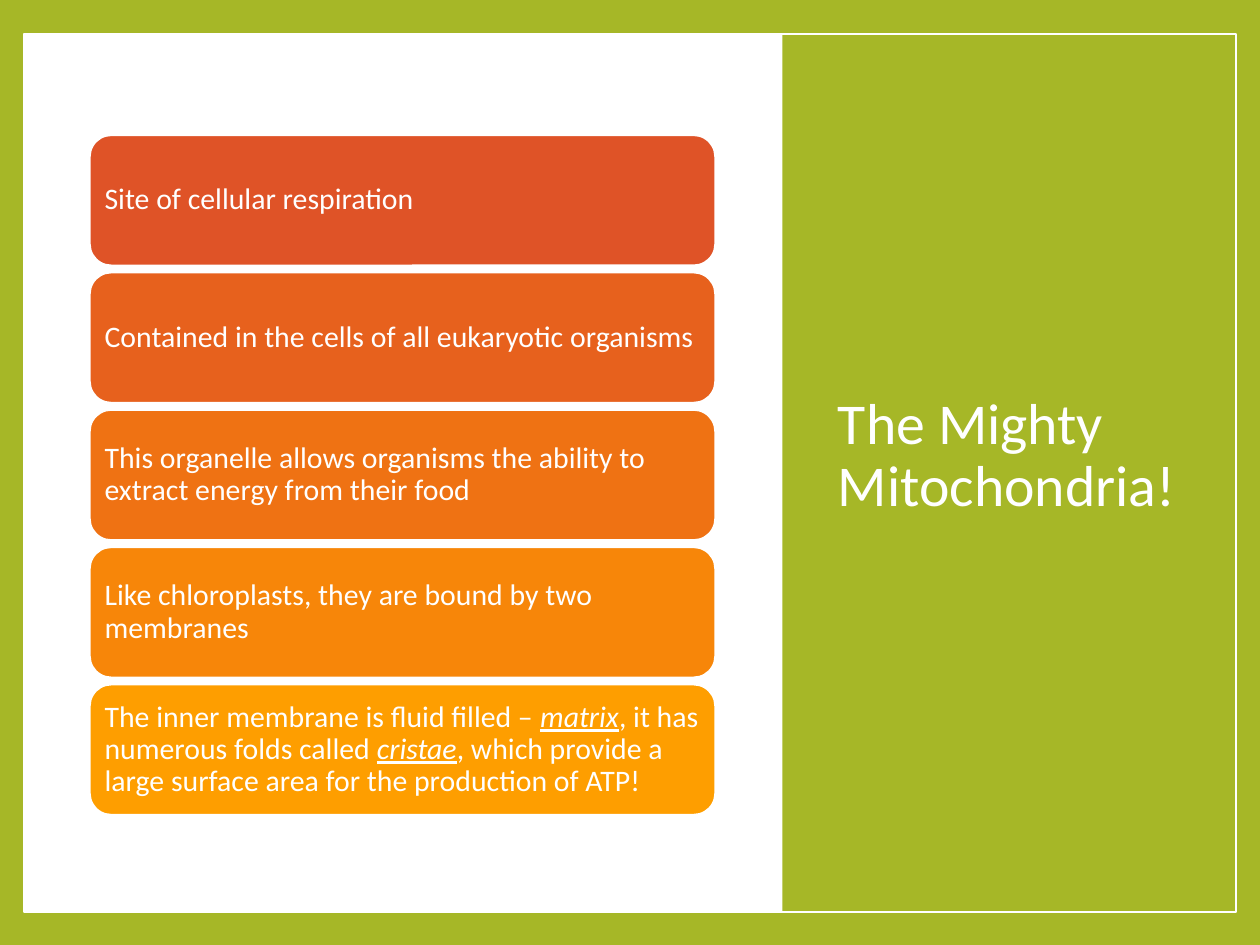
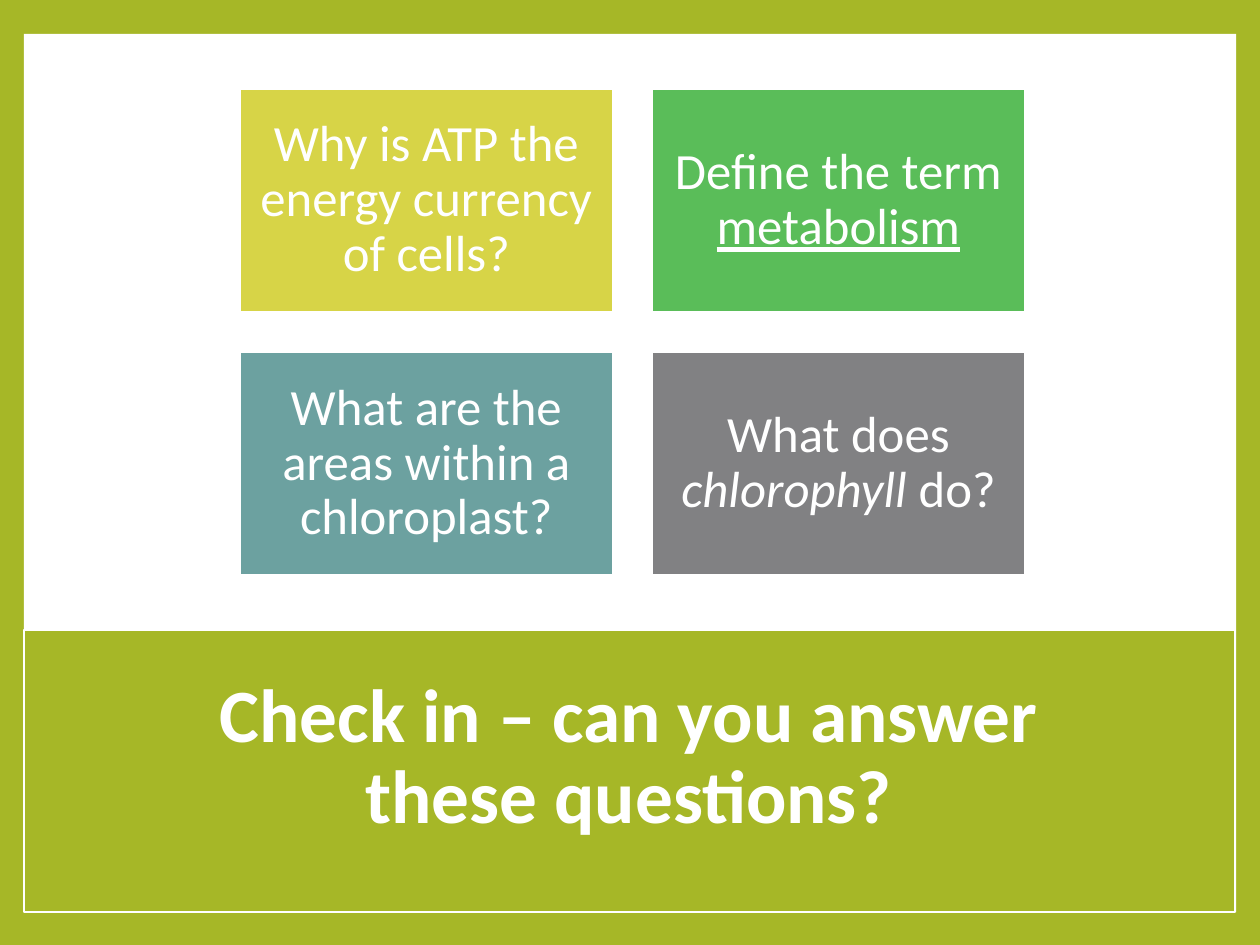
from dataclasses import dataclass
from typing import NamedTuple, Optional

from pptx import Presentation
from pptx.dml.color import RGBColor
from pptx.enum.shapes import MSO_SHAPE
from pptx.enum.text import MSO_ANCHOR, MSO_AUTO_SIZE, PP_ALIGN
from pptx.util import Inches, Pt

# Shared look
COLORS = {
    "lime": "A6B727", "white": "FFFFFF",
    "red": "DF5327", "vermilion": "E7611D", "orange": "EF7213",
    "amber": "F78609", "gold": "FE9E00",
    "yellow": "D7D447", "green": "5ABD59", "teal": "6CA1A0", "gray": "818183",
}
FONT = "Calibri"
LINE_SPACING = 0.9

# The slide is a grid of 100 columns by 75 rows
COLUMNS, ROWS = 100, 75
SLIDE_WIDTH, SLIDE_HEIGHT = Inches(10), Inches(7.5)


class Box(NamedTuple):
    column: float
    row: float
    columns: float
    rows: float

    def lengths(self) -> tuple:
        across, down = SLIDE_WIDTH / COLUMNS, SLIDE_HEIGHT / ROWS
        return (round(self.column * across), round(self.row * down),
                round(self.columns * across), round(self.rows * down))


class TextRun(NamedTuple):
    text: str
    italic: bool = False
    underline: bool = False


class Card(NamedTuple):
    color: str
    runs: list


@dataclass
class CardGrid:
    first: Box
    per_row: int
    column_gap: float
    row_gap: float
    shape_type: MSO_SHAPE
    font_size: float
    inset: float
    alignment: PP_ALIGN

    def box(self, index: int) -> Box:
        row, column = divmod(index, self.per_row)
        first = self.first
        return Box(first.column + column * (first.columns + self.column_gap),
                   first.row + row * (first.rows + self.row_gap),
                   first.columns, first.rows)


FULL_SLIDE = Box(0, 0, COLUMNS, ROWS)
FRAME = Box(1.9, 2.7, 96.2, 69.7)

FACTS_GRID = CardGrid(Box(7.1, 10.7, 49.7, 10.4), 1, 0, 0.5,
                      MSO_SHAPE.ROUNDED_RECTANGLE, 17, 0.07, PP_ALIGN.LEFT)
FACTS = [
    Card("red", [TextRun("Site of cellular respiration")]),
    Card("vermilion", [TextRun("Contained in the cells of all eukaryotic organisms")]),
    Card("orange", [TextRun("This organelle allows organisms the ability to "
                            "extract energy from their food")]),
    Card("amber", [TextRun("Like chloroplasts, they are bound by two membranes")]),
    Card("gold", [
        TextRun("The inner membrane is fluid filled – "),
        TextRun("matrix", italic=True, underline=True),
        TextRun(", it has numerous folds called "),
        TextRun("cristae", italic=True, underline=True),
        TextRun(", which provide a large surface area for the production of ATP!"),
    ]),
]

QUESTIONS_GRID = CardGrid(Box(19, 7, 29.7, 17.8), 2, 3, 3.1,
                          MSO_SHAPE.RECTANGLE, 29, 0.12, PP_ALIGN.CENTER)
QUESTIONS = [
    Card("yellow", [TextRun("Why is ATP the energy currency of cells?")]),
    Card("green", [TextRun("Define the term "),
                   TextRun("metabolism", underline=True)]),
    Card("teal", [TextRun("What are the areas within a chloroplast?")]),
    Card("gray", [TextRun("What does "), TextRun("chlorophyll", italic=True),
                  TextRun(" do?")]),
]


def rgb(name: str) -> RGBColor:
    return RGBColor.from_string(COLORS[name])


def add_panel(slide, box: Box, fill: Optional[str] = None, line_width: float = 0,
              shape_type: MSO_SHAPE = MSO_SHAPE.RECTANGLE):
    """Draw a flat shape, with a white outline if a line width is given."""
    shape = slide.shapes.add_shape(shape_type, *box.lengths())
    shape.shadow.inherit = False
    if fill:
        shape.fill.solid()
        shape.fill.fore_color.rgb = rgb(fill)
    else:
        shape.fill.background()
    if line_width:
        shape.line.color.rgb = rgb("white")
        shape.line.width = Pt(line_width)
    else:
        shape.line.fill.background()
    return shape


def write_text(shape, runs: list, size: float, alignment: PP_ALIGN,
               bold: bool = False) -> None:
    """Fill a shape with one paragraph of white text, centred vertically."""
    frame = shape.text_frame
    frame.word_wrap = True
    frame.auto_size = MSO_AUTO_SIZE.NONE
    frame.vertical_anchor = MSO_ANCHOR.MIDDLE
    paragraph = frame.paragraphs[0]
    paragraph.alignment = alignment
    paragraph.line_spacing = LINE_SPACING
    for item in runs:
        run = paragraph.add_run()
        run.text = item.text
        font = run.font
        font.name, font.size, font.bold = FONT, Pt(size), bold
        font.italic, font.underline = item.italic, item.underline
        font.color.rgb = rgb("white")


def add_cards(slide, grid: CardGrid, cards: list) -> None:
    for index, card in enumerate(cards):
        shape = add_panel(slide, grid.box(index), card.color, 1.5, grid.shape_type)
        frame = shape.text_frame
        frame.margin_left = frame.margin_right = Inches(grid.inset)
        frame.margin_top = frame.margin_bottom = Inches(grid.inset)
        write_text(shape, card.runs, grid.font_size, grid.alignment)


def add_framed_slide(presentation):
    """Start a slide with a lime border around a white page."""
    slide = presentation.slides.add_slide(presentation.slide_layouts[5])
    add_panel(slide, FULL_SLIDE, "lime")
    add_panel(slide, FRAME, "white")
    return slide


def place_title(slide, text: str, box: Box, size: float, alignment: PP_ALIGN,
                bold: bool = False) -> None:
    """Move the title placeholder onto its band, in front of the panels."""
    title = slide.shapes.title
    title.left, title.top, title.width, title.height = box.lengths()
    title.element.getparent().append(title.element)
    write_text(title, [TextRun(text)], size, alignment, bold)


def build_mitochondria_slide(presentation) -> None:
    slide = add_framed_slide(presentation)
    add_panel(slide, Box(62.1, 0, 37.9, ROWS), "lime")
    place_title(slide, "The Mighty Mitochondria!", Box(65.5, 6.7, 29.3, 59.1),
                33, PP_ALIGN.LEFT)
    add_panel(slide, FRAME, line_width=1)
    add_cards(slide, FACTS_GRID, FACTS)


def build_check_in_slide(presentation) -> None:
    slide = add_framed_slide(presentation)
    add_panel(slide, Box(1.9, 50, 96.1, 22.4), "lime", 1)
    place_title(slide, "Check in – can you answer these questions?",
                Box(9.4, 52.8, 81, 14.8), 43, PP_ALIGN.CENTER, bold=True)
    add_cards(slide, QUESTIONS_GRID, QUESTIONS)


def main() -> None:
    presentation = Presentation()
    presentation.slide_width, presentation.slide_height = SLIDE_WIDTH, SLIDE_HEIGHT
    build_mitochondria_slide(presentation)
    build_check_in_slide(presentation)
    presentation.save("out.pptx")


if __name__ == "__main__":
    main()
